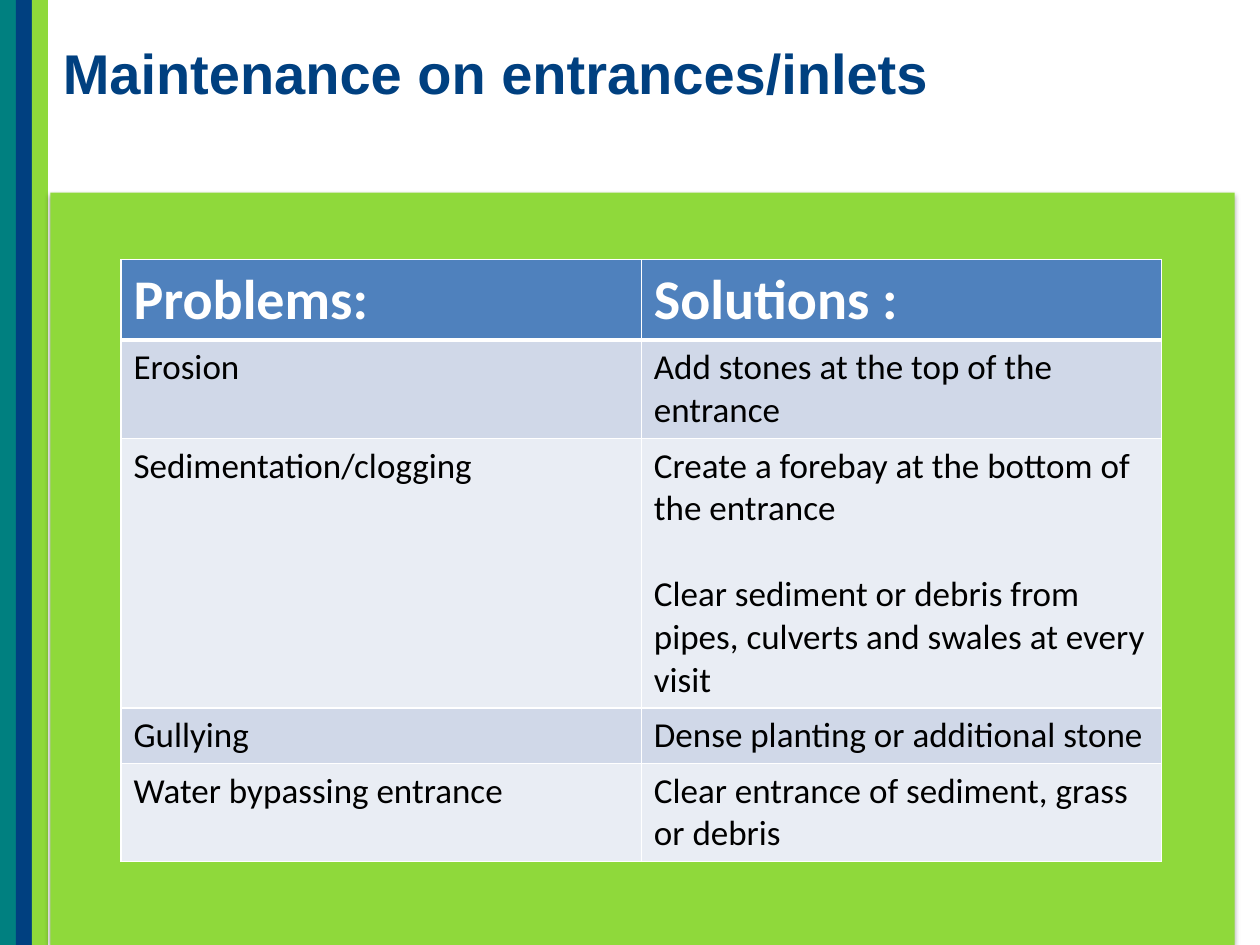
from lxml.etree import SubElement
from pptx import Presentation
from pptx.dml.color import RGBColor
from pptx.enum.shapes import MSO_SHAPE
from pptx.oxml.ns import qn
from pptx.util import Inches, Pt

WIDE, HIGH = 10, 7.5
LIME, NAVY, TEAL, WHITE = "8FD93B", "004080", "008080", "FFFFFF"
HEAD, BANDS = "4F81BD", ("D0D8E8", "E9EDF4")

TITLE = {"name": "Arial", "size": Pt(32), "bold": True, "color": NAVY}
TOP = {"name": "Calibri", "size": Pt(32), "bold": True, "color": WHITE}
BODY = {"name": "Calibri", "size": Pt(20), "bold": False, "color": "000000"}

# Each cell is a list of paragraphs
ROWS = [
    (["Problems:"], ["Solutions :"]),
    (["Erosion"], ["Add stones at the top of the entrance"]),
    (["Sedimentation/clogging"],
     ["Create a forebay at the bottom of the entrance",
      "Clear sediment or debris from pipes, culverts and swales at every visit"]),
    (["Gullying"], ["Dense planting or additional stone"]),
    (["Water bypassing entrance"],
     ["Clear entrance of sediment, grass or debris"]),
]
ROW_HIGH = [0.64, 0.78, 2.14, 0.44, 0.78]


def paint(color):
    return RGBColor.from_string(color)


def place(box):
    return [Inches(n) for n in box]


def style(para, look):
    for key, value in look.items():
        if key == "color":
            para.font.color.rgb = paint(value)
        else:
            setattr(para.font, key, value)


def write(frame, lines, look, gap=0):
    for i, line in enumerate(lines):
        para = frame.add_paragraph() if i else frame.paragraphs[0]
        style(para, look)
        para.add_run().text = line
        style(para.runs[0], look)
        if i:
            para.space_before = Pt(gap)


def block(slide, box, color):
    shape = slide.shapes.add_shape(MSO_SHAPE.RECTANGLE, *place(box))
    shape.shadow.inherit = False
    shape.fill.solid()
    shape.fill.fore_color.rgb = paint(color)
    shape.line.fill.background()
    return shape


def stripes(slide, box):
    """Equal upright bars along the slide's edge."""
    left, top, width, height = box
    step = width / 3
    for i, color in enumerate((TEAL, NAVY, LIME)):
        block(slide, (left + i * step, top, step, height), color)


def panel(slide, box):
    """Lime field with a soft shadow below it."""
    shape = block(slide, box, LIME)
    effects = shape._element.spPr.find(qn("a:effectLst"))
    shade = SubElement(effects, qn("a:outerShdw"), blurRad=str(Pt(3.1)),
                       dist=str(Pt(1.8)), dir="5400000", rotWithShape="0")
    tone = SubElement(shade, qn("a:srgbClr"), val="000000")
    SubElement(tone, qn("a:alpha"), val="35000")


def title(slide, box):
    frame = slide.shapes.add_textbox(*place(box)).text_frame
    frame.word_wrap = True
    write(frame, ["Maintenance on entrances/inlets"], TITLE)


def edge(cell, side, width):
    """Borders must come before the fill in the cell's XML."""
    line = SubElement(cell._tc.get_or_add_tcPr(), qn(f"a:{side}"),
                      w=str(Pt(width)))
    fill = SubElement(line, qn("a:solidFill"))
    SubElement(fill, qn("a:srgbClr"), val=WHITE)


def grid(slide, box):
    """Problems and solutions, with banded rows under a header."""
    table = slide.shapes.add_table(len(ROWS), 2, *place(box)).table
    for r, row in enumerate(ROWS):
        table.rows[r].height = Inches(ROW_HIGH[r])
        for c, lines in enumerate(row):
            cell = table.cell(r, c)
            for side in ("lnL", "lnR", "lnT", "lnB"):
                thick = (r, side) in ((0, "lnB"), (1, "lnT"))
                edge(cell, side, 3 if thick else 1)
            cell.fill.solid()
            cell.fill.fore_color.rgb = paint(BANDS[(r - 1) % 2] if r else HEAD)
            write(cell.text_frame, lines, BODY if r else TOP, gap=24.4)


def main():
    deck = Presentation()
    deck.slide_width, deck.slide_height = Inches(WIDE), Inches(HIGH)
    slide = deck.slides.add_slide(deck.slide_layouts[6])
    slide.background.fill.solid()
    slide.background.fill.fore_color.rgb = paint(WHITE)

    edge_x = 0.04 * WIDE
    stripes(slide, (0, 0, 0.038 * WIDE, HIGH))
    panel(slide, (edge_x, 1.53, 0.94 * WIDE, HIGH - 1.53))
    title(slide, (edge_x, 0.26, WIDE - edge_x, 1.26))
    grid(slide, (0.96, 2.06, 8.26, sum(ROW_HIGH)))
    deck.save("out.pptx")


if __name__ == "__main__":
    main()
